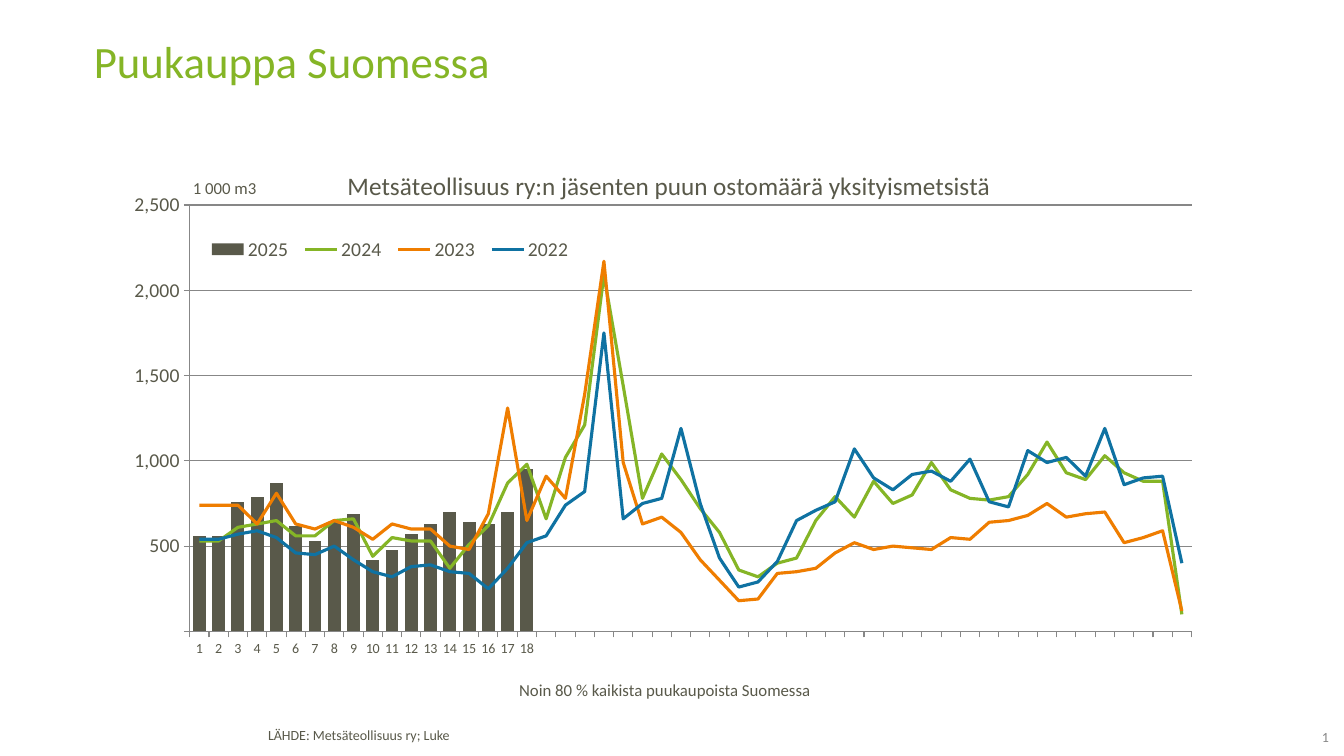
from dataclasses import dataclass

from lxml.etree import SubElement
from pptx import Presentation
from pptx.chart.chart import Chart
from pptx.chart.data import CategoryChartData
from pptx.dml.color import RGBColor
from pptx.enum.chart import XL_CHART_TYPE, XL_LEGEND_POSITION, XL_MARKER_STYLE, XL_TICK_MARK
from pptx.enum.text import MSO_ANCHOR, PP_ALIGN
from pptx.oxml import parse_xml
from pptx.oxml.ns import nsdecls, qn
from pptx.slide import Slide
from pptx.text.text import Font, TextFrame
from pptx.util import Inches, Pt

FONT = "Calibri"
OLIVE, GREEN, ORANGE, BLUE, GREY = "59594A", "85B526", "EF7D00", "0F72A2", "878787"
WEEKS = 52
UNIT = 10000


@dataclass
class Year:
    """Weekly purchases of one year, in units of 10 000 m3."""
    name: str
    color: str
    volumes: list[int]


@dataclass
class Note:
    """A small line of text on the page."""
    text: str
    left: float
    top: float
    width: float
    height: float
    size: int
    color: str = OLIVE
    align: PP_ALIGN = PP_ALIGN.LEFT
    anchor: MSO_ANCHOR = MSO_ANCHOR.TOP
    insets: tuple[float, float, float, float] = (0.1, 0.05, 0.1, 0.05)
    line_spacing: float = 1.0


YEARS = [
    Year("2025", OLIVE, [56, 56, 76, 79, 87, 62, 53, 64, 69, 42, 48, 57, 63, 70, 64, 63, 70, 95]),
    Year("2024", GREEN, [
        53, 53, 61, 63, 65, 56, 56, 65, 66, 44, 55, 53, 53, 37, 51, 62, 87, 98,
        66, 102, 121, 209, 144, 78, 104, 89, 72, 58, 36, 32, 40, 43, 65, 79, 67,
        88, 75, 80, 99, 83, 78, 77, 79, 92, 111, 93, 89, 103, 93, 88, 88, 10]),
    Year("2023", ORANGE, [
        74, 74, 74, 63, 81, 63, 60, 65, 61, 54, 63, 60, 60, 50, 48, 69, 131, 65,
        91, 78, 139, 217, 99, 63, 67, 58, 42, 30, 18, 19, 34, 35, 37, 46, 52,
        48, 50, 49, 48, 55, 54, 64, 65, 68, 75, 67, 69, 70, 52, 55, 59, 12]),
    Year("2022", BLUE, [
        54, 54, 57, 59, 55, 46, 45, 50, 42, 35, 32, 38, 39, 35, 34, 25, 37, 52,
        56, 74, 82, 175, 66, 75, 78, 119, 75, 43, 26, 29, 41, 65, 71, 76, 107,
        90, 83, 92, 94, 88, 101, 76, 73, 106, 99, 102, 91, 119, 86, 90, 91, 40]),
]

NOTES = [
    Note("LÄHDE: Metsäteollisuus ry; Luke", 2.56, 7.18, 7.18, 0.27, 10, line_spacing=0.85),
    Note("1", 12.65, 7.24, 0.53, 0.19, 10, GREY, PP_ALIGN.RIGHT, MSO_ANCHOR.MIDDLE, (0, 0, 0, 0.04)),
    Note("Noin 80 % kaikista puukaupoista Suomessa", 5.05, 6.69, 3.28, 0.31, 12),
]


def rgb(color: str) -> RGBColor:
    """Turn a hex string into a colour."""
    return RGBColor.from_string(color)


def style_font(font: Font, size: float, color: str = OLIVE) -> None:
    """Set typeface, size and colour."""
    font.name = FONT
    font.size = Pt(size)
    font.bold = False
    font.color.rgb = rgb(color)


def write_text(frame: TextFrame, text: str, size: float, color: str = OLIVE) -> None:
    """Fill a text frame with one formatted line."""
    frame.text = text
    for span in frame.paragraphs[0].runs:
        style_font(span.font, size, color)


def add_title(page: Slide) -> None:
    """Place the page title."""
    title = page.shapes.title
    title.left, title.top, title.width, title.height = map(Inches, (0.83, 0.39, 11.69, 0.98))
    frame = title.text_frame
    write_text(frame, "Puukauppa Suomessa", 32, GREEN)
    frame.vertical_anchor = MSO_ANCHOR.TOP
    frame.paragraphs[0].alignment = PP_ALIGN.LEFT
    frame.paragraphs[0].line_spacing = 0.8


def add_note(page: Slide, note: Note) -> None:
    """Place a small line of text."""
    box = page.shapes.add_textbox(*map(Inches, (note.left, note.top, note.width, note.height)))
    frame = box.text_frame
    frame.word_wrap = True
    frame.vertical_anchor = note.anchor
    frame.margin_left, frame.margin_top, frame.margin_right, frame.margin_bottom = map(Inches, note.insets)
    write_text(frame, note.text, note.size, note.color)
    frame.paragraphs[0].alignment = note.align
    frame.paragraphs[0].line_spacing = note.line_spacing


def place(chart: Chart, query: str, index: int, inner: bool = False, **measures: float) -> None:
    """Give a chart part a manual position, in fractions of the chart."""
    part = chart.element.xpath(query)[0]
    for layout in part.findall(qn("c:layout")):
        part.remove(layout)
    layout = parse_xml(f"<c:layout {nsdecls('c')}><c:manualLayout/></c:layout>")
    manual = layout[0]
    if inner:
        SubElement(manual, qn("c:layoutTarget")).set("val", "inner")
    for name in "xy":
        SubElement(manual, qn(f"c:{name}Mode")).set("val", "edge")
    for name, value in measures.items():
        SubElement(manual, qn(f"c:{name}")).set("val", str(value))
    part.insert(index, layout)
    for overlay in part.findall(qn("c:overlay")):
        overlay.set("val", "1")


def split_lines(chart: Chart) -> None:
    """Turn every series after the first into a line."""
    columns = chart.element.xpath(".//c:barChart")[0]
    lines = parse_xml(
        f'<c:lineChart {nsdecls("c")}><c:grouping val="standard"/>'
        '<c:varyColors val="0"/><c:marker val="1"/></c:lineChart>')
    for series in columns.findall(qn("c:ser"))[1:]:
        for invert in series.findall(qn("c:invertIfNegative")):
            series.remove(invert)
        lines.insert(len(lines) - 1, series)
    for axis in columns.findall(qn("c:axId")):
        SubElement(lines, qn("c:axId")).set("val", axis.get("val"))
    columns.addnext(lines)


def format_axes(chart: Chart) -> None:
    """Format both axes and the unit label."""
    for axis, size in ((chart.category_axis, 10), (chart.value_axis, 14)):
        style_font(axis.tick_labels.font, size)
        axis.major_tick_mark = XL_TICK_MARK.OUTSIDE
        axis.minor_tick_mark = XL_TICK_MARK.NONE
        axis.format.line.color.rgb = rgb(GREY)
    values = chart.value_axis
    values.minimum_scale, values.maximum_scale, values.major_unit = 0, 2500000, 500000
    values.tick_labels.number_format = "#,###,"
    values.tick_labels.number_format_is_linked = False
    values.has_major_gridlines = True
    values.major_gridlines.format.line.color.rgb = rgb(GREY)
    write_text(values.axis_title.text_frame, "1 000 m3", 12)
    chart.element.xpath(".//c:valAx/c:title//a:bodyPr")[0].set("rot", "0")


def add_purchases_chart(page: Slide) -> None:
    """Draw the current year as columns and earlier years as lines."""
    data = CategoryChartData(number_format="General")
    data.categories = [str(week) for week in range(1, WEEKS + 1)]
    for year in YEARS:
        gap = [None] * (WEEKS - len(year.volumes))
        data.add_series(year.name, [volume * UNIT for volume in year.volumes] + gap)
    chart = page.shapes.add_chart(
        XL_CHART_TYPE.COLUMN_CLUSTERED, *map(Inches, (0.83, 1.57, 11.69, 5.16)), data).chart
    style_font(chart.font, 10)
    split_lines(chart)
    columns, lines = chart.plots
    columns.gap_width = 50
    columns.vary_by_categories = False
    columns.series[0].format.fill.solid()
    columns.series[0].format.fill.fore_color.rgb = rgb(YEARS[0].color)
    for series, year in zip(lines.series, YEARS[1:]):
        series.format.line.color.rgb = rgb(year.color)
        series.format.line.width = Pt(2.25)
        series.marker.style = XL_MARKER_STYLE.NONE
        series.smooth = False
    for point in chart.element.xpath(".//c:barChart//c:cat//c:pt")[len(YEARS[0].volumes):]:
        point.getparent().remove(point)
    format_axes(chart)
    write_text(chart.chart_title.text_frame, "Metsäteollisuus ry:n jäsenten puun ostomäärä yksityismetsistä", 18)
    chart.has_legend = True
    chart.legend.position = XL_LEGEND_POSITION.RIGHT
    style_font(chart.legend.font, 14)
    place(chart, "./c:chart/c:title", 1, x=0.22, y=0.01)
    place(chart, ".//c:valAx/c:title", 1, x=0.09, y=0.03)
    place(chart, ".//c:legend", 1, x=0.1, y=0.14, w=0.32, h=0.07)
    place(chart, ".//c:plotArea", 0, inner=True, x=0.09, y=0.09, w=0.85, h=0.82)


def main() -> None:
    """Build and save the deck."""
    deck = Presentation()
    deck.slide_width, deck.slide_height = Inches(13.33), Inches(7.5)
    page = deck.slides.add_slide(deck.slide_layouts[5])
    add_title(page)
    add_purchases_chart(page)
    for note in NOTES:
        add_note(page, note)
    deck.save("out.pptx")


if __name__ == "__main__":
    main()
